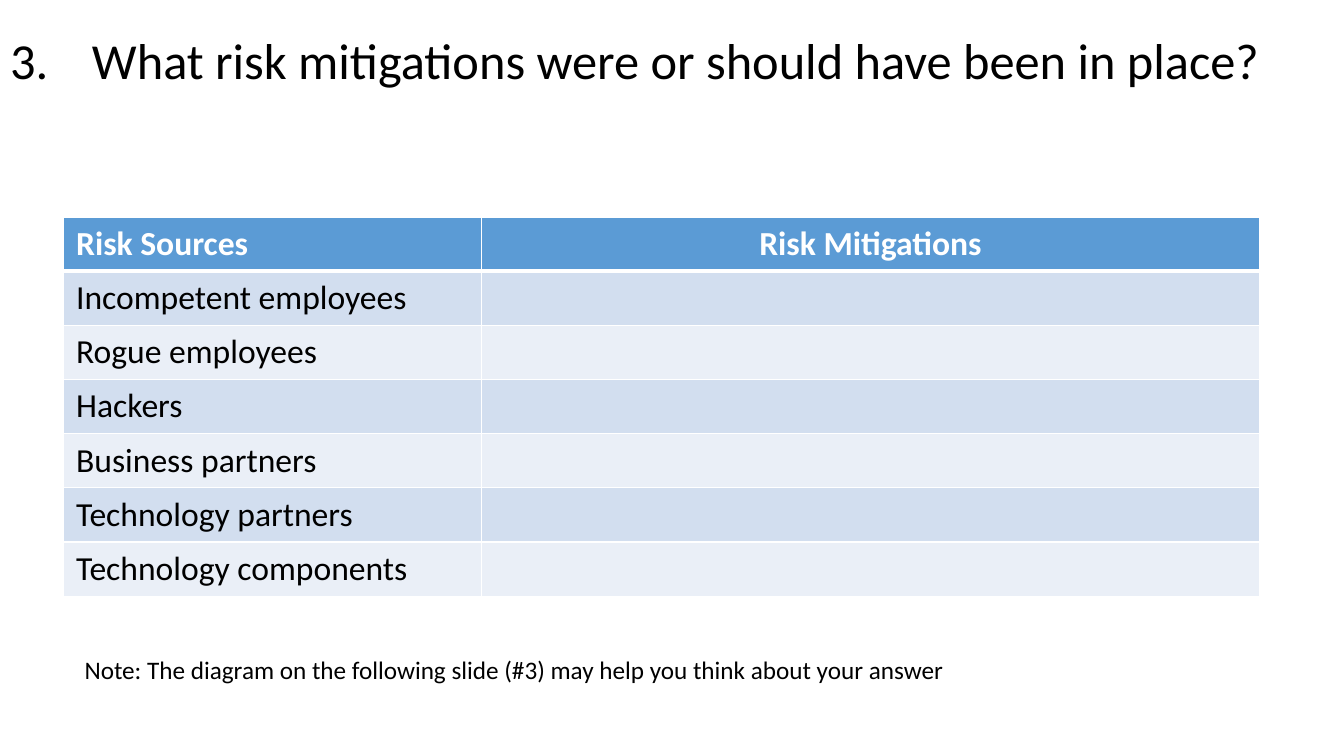
import pptx
import pptx.util
import pptx.dml.color
import pptx.enum.text
import pptx.oxml.ns
import lxml.etree

Pt = pptx.util.Pt
RGBColor = pptx.dml.color.RGBColor
ALIGN = pptx.enum.text.PP_ALIGN
ANCHOR = pptx.enum.text.MSO_ANCHOR
qn = pptx.oxml.ns.qn

BLACK = RGBColor(0x00, 0x00, 0x00)
WHITE = RGBColor(0xFF, 0xFF, 0xFF)
BLUE = RGBColor(0x5B, 0x9B, 0xD5)
BANDS = [RGBColor(0xEA, 0xEF, 0xF7), RGBColor(0xD2, 0xDE, 0xEF)]

ROWS = [
    ("Risk Sources", "Risk Mitigations"),
    ("Incompetent employees", ""),
    ("Rogue employees", ""),
    ("Hackers", ""),
    ("Business partners", ""),
    ("Technology partners", ""),
    ("Technology components", ""),
]
WIDTHS = [299.2, 555.2]
ROW_HIGH = 38.7
MARGINS = {"margin_left": 9.4, "margin_right": 9.4,
           "margin_top": 4.7, "margin_bottom": 4.7}


def write(frame, text, size, color, bold=False, align=ALIGN.LEFT):
    """Put one formatted line in a text frame and return its paragraph."""
    line = frame.paragraphs[0]
    line.alignment = align
    run = line.add_run()
    run.text = text
    look = {"name": "Calibri", "size": Pt(size), "bold": bold}
    for key, value in look.items():
        setattr(run.font, key, value)
    run.font.color.rgb = color
    return line


def edge(cell, side, width):
    """Draw a white border on one side of a cell."""
    props = cell._tc.get_or_add_tcPr()
    line = lxml.etree.SubElement(props, qn("a:ln" + side), w=str(Pt(width)))
    fill = lxml.etree.SubElement(line, qn("a:solidFill"))
    lxml.etree.SubElement(fill, qn("a:srgbClr"), val=str(WHITE))


deck = pptx.Presentation()
deck.slide_width, deck.slide_height = Pt(960), Pt(540)
slide = deck.slides.add_slide(deck.slide_layouts[5])

# Title, numbered from three
title = slide.shapes.title
place = {"left": 0, "top": 0, "width": 960, "height": 90}
for key, value in place.items():
    setattr(title, key, Pt(value))
title.text_frame.vertical_anchor = ANCHOR.MIDDLE
head = write(title.text_frame,
             "What risk mitigations were or should have been in place?",
             36, BLACK)
head.line_spacing = 0.9
props = head._p.get_or_add_pPr()
props.set("marL", str(Pt(58.5)))
props.set("indent", str(Pt(-58.5)))
lxml.etree.SubElement(props, qn("a:buFont"), typeface="Calibri")
lxml.etree.SubElement(props, qn("a:buAutoNum"),
                      type="arabicPeriod", startAt="3")

# Risk table
table = slide.shapes.add_table(
    len(ROWS), len(WIDTHS), Pt(45), Pt(155),
    Pt(sum(WIDTHS)), Pt(ROW_HIGH * len(ROWS))).table
for column, width in zip(table.columns, WIDTHS):
    column.width = Pt(width)
for r, texts in enumerate(ROWS):
    table.rows[r].height = Pt(ROW_HIGH)
    top = r == 0
    for c, text in enumerate(texts):
        cell = table.cell(r, c)
        for key, value in MARGINS.items():
            setattr(cell, key, Pt(value))
        for side in "LRTB":
            thick = (top and side == "B") or (r == 1 and side == "T")
            edge(cell, side, 3 if thick else 1)
        cell.fill.solid()
        cell.fill.fore_color.rgb = BLUE if top else BANDS[r % 2]
        if text:
            write(cell.text_frame, text, 24, WHITE if top else BLACK, top,
                  ALIGN.CENTER if c else ALIGN.LEFT)

# Note
note = slide.shapes.add_textbox(Pt(53.3), Pt(463.7), Pt(810), Pt(29))
note.text_frame.word_wrap = True
write(note.text_frame,
      "Note: The diagram on the following slide (#3) may help you think"
      " about your answer", 18, BLACK)

deck.save("out.pptx")
